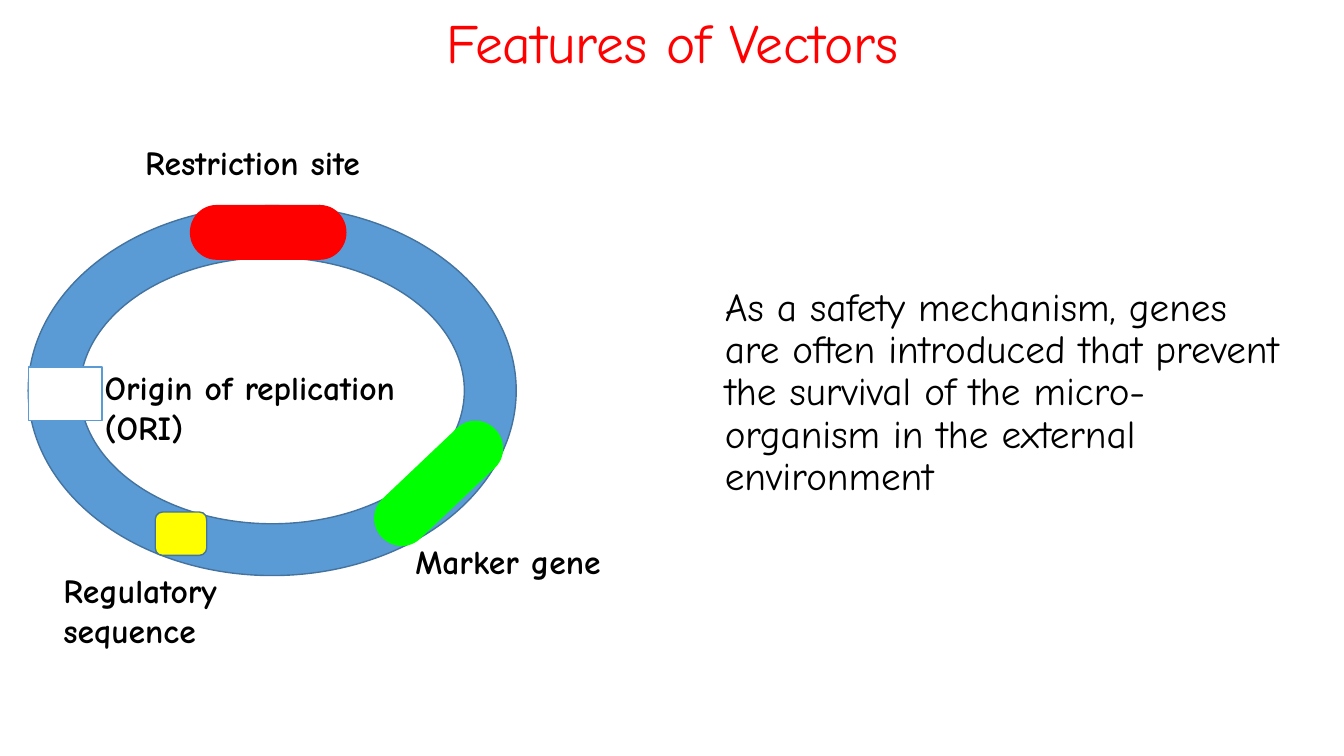
"""Draw a slide on the features of vectors around a ring-shaped plasmid."""
import pptx
import pptx.dml.color
import pptx.enum.shapes
import pptx.enum.text
import pptx.util

SHAPE = pptx.enum.shapes.MSO_SHAPE
ALIGN = pptx.enum.text.PP_ALIGN
ANCHOR = pptx.enum.text.MSO_ANCHOR
GROW = pptx.enum.text.MSO_AUTO_SIZE.SHAPE_TO_FIT_TEXT
WIDTH, HEIGHT = pptx.util.Inches(13.33), pptx.util.Inches(7.5)
FONT = "Comic Neue"
BLUE, DARK_BLUE, WHITE, BLACK = "5B9BD5", "43739E", "FFFFFF", "000000"
RED, GREEN, YELLOW = "FF0000", "00FF00", "FFFF00"
GENE_SIZE = (11.55, 7.07)


def colour(value):
    return pptx.dml.color.RGBColor.from_string(value)


def place(left, top, width, height):
    return [int(share * side / 100) for share, side in
            zip((left, top, width, height), (WIDTH, HEIGHT) * 2)]


def set_values(target, values):
    for name, value in values.items():
        setattr(target, name, value)


def add_text(shapes, area, lines, size, ink=BLACK, bold=False, frame=None, layout=None):
    box = shapes.add_textbox(*place(*area))
    set_values(box.text_frame, {"word_wrap": True} | (frame or {}))
    for index, line in enumerate(lines):
        para = box.text_frame.add_paragraph() if index else box.text_frame.paragraphs[0]
        set_values(para, layout or {})
        span = para.add_run()
        span.text = line
        set_values(span.font, {"name": FONT, "size": pptx.util.Pt(size), "bold": bold})
        span.font.color.rgb = colour(ink)


def add_label(shapes, area, *lines, wrap=False):
    add_text(shapes, area, lines, 24, bold=True,
             frame={"word_wrap": wrap, "auto_size": GROW})


def add_part(shapes, kind, area, fill, line, turn=0):
    part = shapes.add_shape(kind, *place(*area))
    part.shadow.inherit = False
    part.rotation = turn
    part.fill.solid()
    part.fill.fore_color.rgb = colour(fill)
    part.line.color.rgb = colour(line)
    part.line.width = pptx.util.Pt(1)
    return part


def add_plasmid(shapes):
    drum = SHAPE.FLOWCHART_DIRECT_ACCESS_STORAGE
    ring = add_part(shapes, SHAPE.DONUT, (2.1, 27.2, 36.31, 48.93), BLUE, DARK_BLUE)
    ring.adjustments[0] = 0.14
    add_part(shapes, SHAPE.RECTANGLE, (2.1, 48.53, 5.48, 7.07), WHITE, BLUE)
    add_part(shapes, drum, (14.18, 27.2, *GENE_SIZE), RED, RED)
    add_part(shapes, drum, (26.86, 60.4, *GENE_SIZE), GREEN, GREEN, turn=316.5)
    add_label(shapes, (7.05, 47.87, 27.38, 12.13), "Origin of replication", "(ORI)")
    add_label(shapes, (10.05, 18.13, 20.33, 6.67), "Restriction site")
    add_label(shapes, (30.16, 70.93, 16.95, 6.67), "Marker gene")
    add_part(shapes, SHAPE.ROUNDED_RECTANGLE, (11.55, 67.73, 3.83, 5.73), YELLOW, DARK_BLUE)
    add_label(shapes, (3.98, 74.67, 15.3, 12.13), "Regulatory sequence", wrap=True)


def main():
    deck = pptx.Presentation()
    set_values(deck, {"slide_width": WIDTH, "slide_height": HEIGHT})
    page = deck.slides.add_slide(deck.slide_layouts[6])
    add_text(page.shapes, (6.9, 1.47, 86.27, 9.07), ["Features of Vectors"], 39.6, RED,
             frame={"vertical_anchor": ANCHOR.MIDDLE},
             layout={"alignment": ALIGN.CENTER, "line_spacing": 0.9})
    add_text(page.shapes, (53.19, 37.33, 43.81, 33.33),
             ["As a safety mechanism, genes are often introduced that prevent the "
              "survival of the micro-organism in the external environment"], 28,
             layout={"line_spacing": 0.9, "space_before": pptx.util.Pt(10)})
    add_plasmid(page.shapes.add_group_shape().shapes)
    deck.save("out.pptx")


if __name__ == "__main__":
    main()
